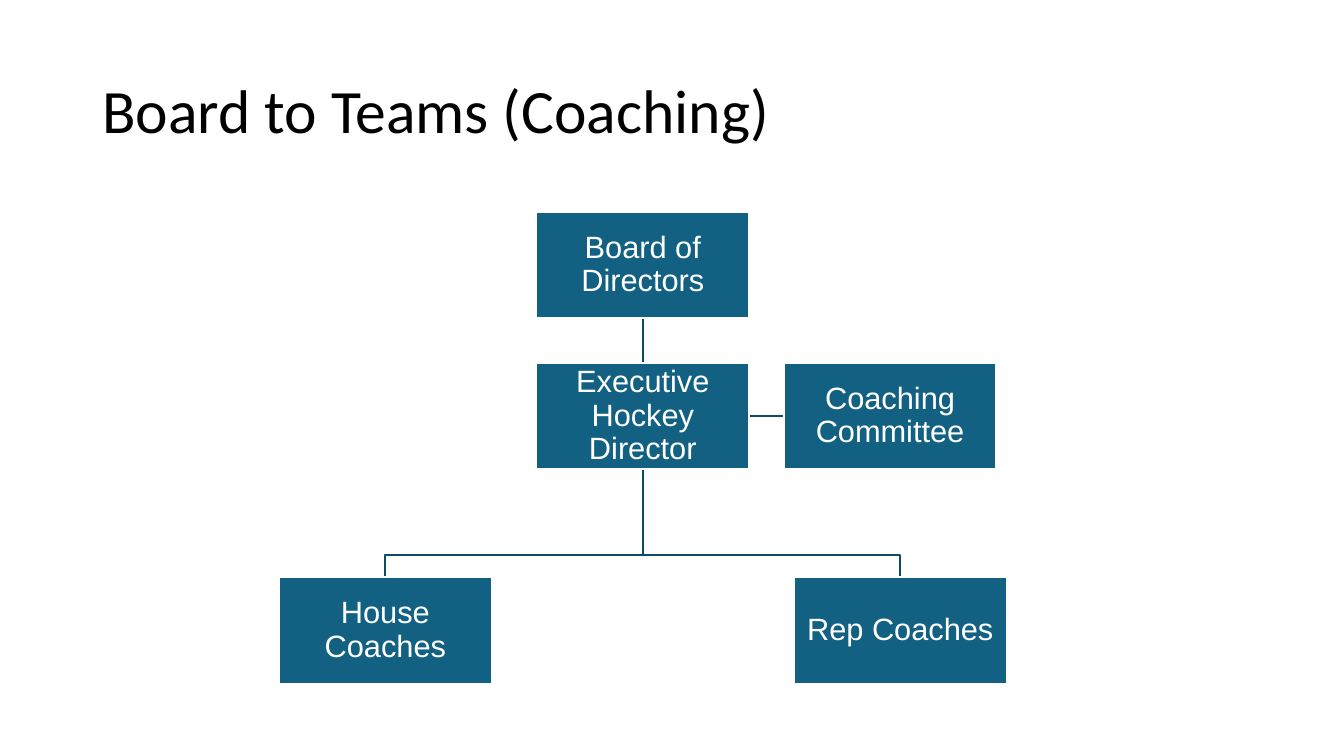
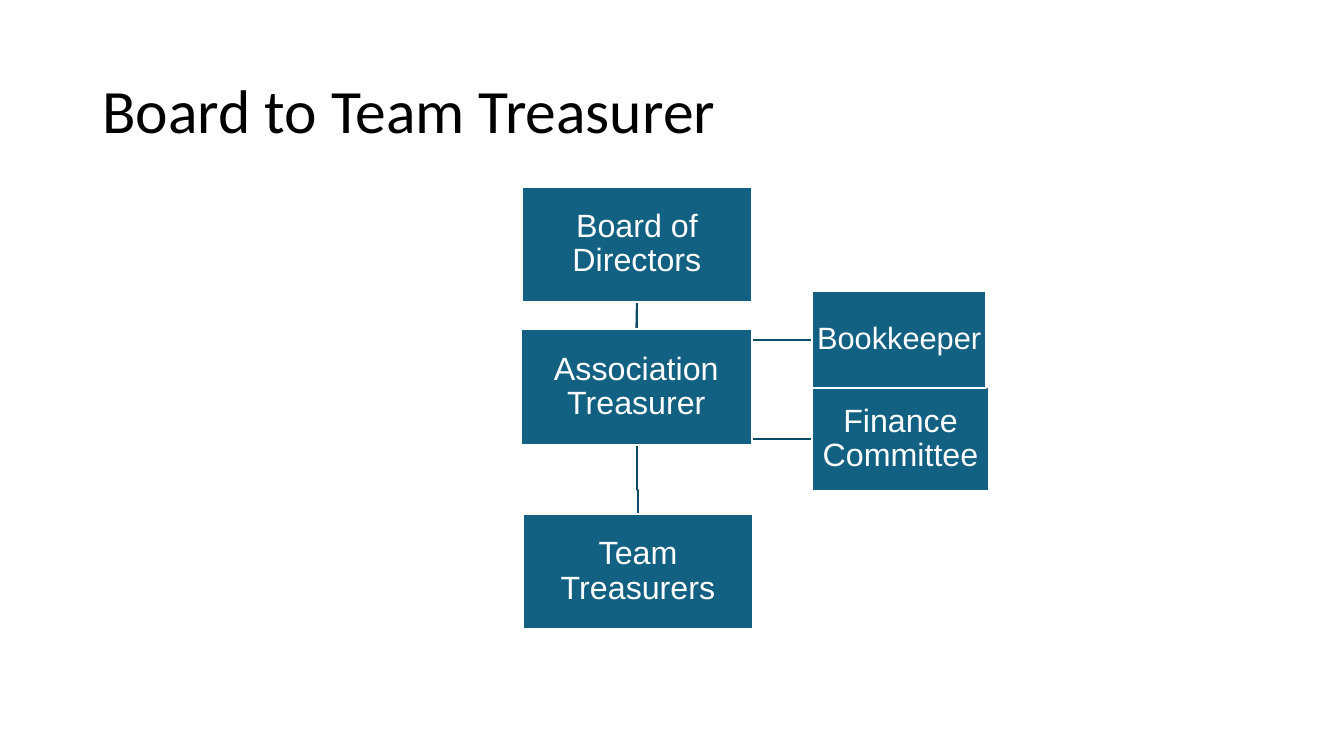
from pptx import Presentation
from pptx import util as u
from pptx.dml.color import RGBColor
from pptx.enum import shapes, text
from pptx.oxml.ns import qn
from lxml import etree

# Shared look
BOX_FILL = RGBColor(0x12, 0x60, 0x82)
LINK_COLOR = RGBColor(0x0D, 0x4C, 0x67)
WHITE = RGBColor(0xFF, 0xFF, 0xFF)
BLACK = RGBColor(0, 0, 0)
LINE_WIDTH = 1.5
TITLE_AREA = (66.1, 28.8, 828, 104.4)
TITLE_FONT = {"name": "Calibri", "size": u.Pt(44), "color": BLACK}


def box_font(size):
    return {"name": "Arial", "size": u.Pt(size), "color": WHITE}


def write_text(shape, content, font, align, margins):
    """Put one middle-anchored paragraph into a shape."""
    frame = shape.text_frame
    horizontal, vertical = margins
    frame_format = {
        "word_wrap": True,
        "vertical_anchor": text.MSO_ANCHOR.MIDDLE,
        "margin_left": u.Pt(horizontal),
        "margin_right": u.Pt(horizontal),
        "margin_top": u.Pt(vertical),
        "margin_bottom": u.Pt(vertical),
    }
    for name, value in frame_format.items():
        setattr(frame, name, value)
    paragraph = frame.paragraphs[0]
    paragraph.alignment = align
    paragraph.line_spacing = 0.9
    run = paragraph.add_run()
    run.text = content
    for name, value in font.items():
        if name == "color":
            run.font.color.rgb = value
        else:
            setattr(run.font, name, value)


def style_line(shape, color):
    shape.line.color.rgb = color
    shape.line.width = u.Pt(LINE_WIDTH)


def add_titled_slide(presentation, title):
    slide = presentation.slides.add_slide(presentation.slide_layouts[6])
    shape = slide.shapes.add_textbox(*map(u.Pt, TITLE_AREA))
    write_text(shape, title, TITLE_FONT, text.PP_ALIGN.LEFT, (7.2, 3.6))
    return slide


def add_box(slide, label, area, size):
    shape = slide.shapes.add_shape(
        shapes.MSO_SHAPE.RECTANGLE, *map(u.Pt, area))
    shape.shadow.inherit = False
    shape.fill.solid()
    shape.fill.fore_color.rgb = BOX_FILL
    style_line(shape, WHITE)
    write_text(shape, label, box_font(size), text.PP_ALIGN.CENTER, (1.4, 1.4))


def add_straight_link(slide, start, end):
    connector = slide.shapes.add_connector(
        shapes.MSO_CONNECTOR.STRAIGHT, *map(u.Pt, start + end))
    style_line(connector, LINK_COLOR)
    properties = connector._element.find(qn("p:spPr"))
    etree.SubElement(properties, qn("a:effectLst"))


def add_bent_link(slide, *points):
    """Draw one open line that turns at each inner point."""
    start, *others = [(u.Pt(x), u.Pt(y)) for x, y in points]
    builder = slide.shapes.build_freeform(*start)
    builder.add_line_segments(others, close=False)
    shape = builder.convert_to_shape()
    shape.shadow.inherit = False
    shape.fill.background()
    style_line(shape, LINK_COLOR)


def build_coaching(presentation):
    slide = add_titled_slide(presentation, "Board to Teams (Coaching)")
    width, height, size = 152, 76, 22
    center, spread = 459.2, 183.9
    board_top, director_top, coach_top = 151.3, 259.2, 412.4
    committee_left, branch_y = 559.8, 396.7
    director_middle = director_top + height / 2
    coach_centers = (center - spread, center + spread)

    # Links from the board, behind the boxes
    origin = (center, board_top + height)
    add_bent_link(slide, origin, (center, director_middle),
                  (committee_left, director_middle))
    for x in coach_centers:
        add_bent_link(slide, origin, (center, branch_y), (x, branch_y),
                      (x, coach_top))
    add_straight_link(slide, origin, (center, director_top))

    # Boxes
    left = center - width / 2
    boxes = [
        ("Board of Directors", left, board_top),
        ("Executive Hockey Director", left, director_top),
        ("Coaching Committee", committee_left, director_top),
        ("House Coaches", coach_centers[0] - width / 2, coach_top),
        ("Rep Coaches", coach_centers[1] - width / 2, coach_top),
    ]
    for label, x, y in boxes:
        add_box(slide, label, (x, y, width, height), size)


def build_treasurer(presentation):
    slide = add_titled_slide(presentation, "Board to Team Treasurer")
    width, height = 164.6, 82.3
    center, treasurer_center, team_center = 455, 454.6, 455.8
    board_top, treasurer_top, team_top = 133.2, 235.3, 367.2
    side_left, jog_y = 580.3, 350

    # Links from the board, behind the boxes
    origin = (center, board_top + height)
    for y in (242.6, 313.6):
        add_bent_link(slide, origin, (center, y), (side_left, y))
    add_straight_link(slide, origin, (treasurer_center, treasurer_top))
    add_bent_link(slide, origin, (center, jog_y), (team_center, jog_y),
                  (team_center, team_top))

    # Boxes
    boxes = [
        ("Board of Directors", center, board_top),
        ("Team Treasurers", team_center, team_top),
        ("Association Treasurer", treasurer_center, treasurer_top),
    ]
    for label, x, y in boxes:
        add_box(slide, label, (x - width / 2, y, width, height), 23)
    add_box(slide, "Finance Committee", (side_left, 276.6, 126, 74), 23)
    add_box(slide, "Bookkeeper", (side_left, 207.6, 124, 69.6), 22)


def main():
    presentation = Presentation()
    presentation.slide_width = u.Pt(960)
    presentation.slide_height = u.Pt(540)
    build_coaching(presentation)
    build_treasurer(presentation)
    presentation.save("out.pptx")


if __name__ == "__main__":
    main()
